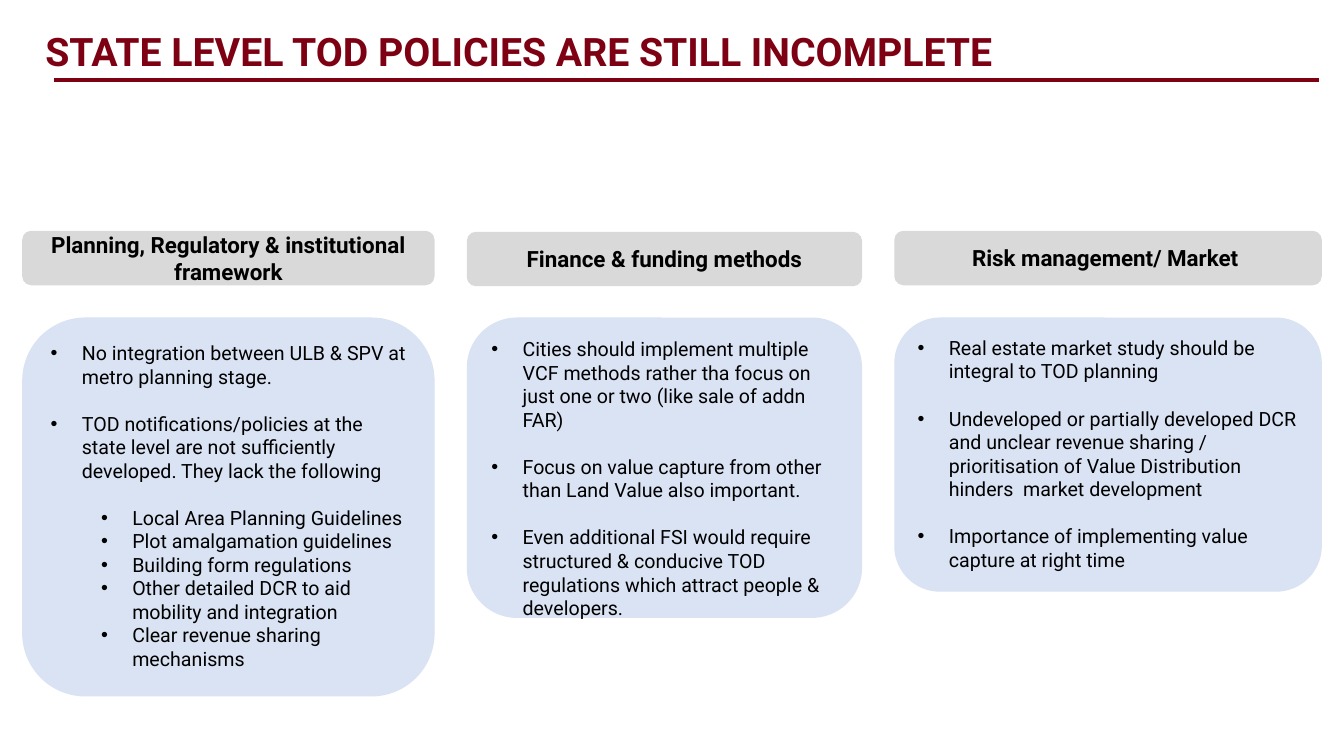
from lxml.etree import SubElement
from pptx import Presentation
from pptx.dml.color import RGBColor
from pptx.enum.shapes import MSO_CONNECTOR, MSO_SHAPE
from pptx.enum.text import MSO_ANCHOR, MSO_AUTO_SIZE, PP_ALIGN
from pptx.oxml.ns import qn
from pptx.util import Inches, Pt

COLORS = {"maroon": "7D0013", "header": "D9D9D9", "body": "DAE3F3", "text": "000000"}
FONT = "Roboto"
BODY_TOP = 3.15
HEADER_HEIGHT = 0.54
PARAGRAPH_GAP = 16.8

COLUMNS = [
    (0.22, 4.09, 2.29, 3.76, "Planning, Regulatory & institutional framework", [
        (0, "No integration between ULB & SPV at metro planning stage."),
        (0, "TOD notifications/policies at the state level are not sufficiently developed. "
            "They lack the following"),
        (1, "Local Area Planning Guidelines"),
        (1, "Plot amalgamation guidelines"),
        (1, "Building form regulations"),
        (1, "Other detailed DCR to aid mobility and integration"),
        (1, "Clear revenue sharing mechanisms"),
    ]),
    (4.63, 3.92, 2.3, 2.98, "Finance & funding methods", [
        (0, "Cities should implement multiple VCF methods rather tha focus on just one or two "
            "(like sale of addn FAR)"),
        (0, "Focus on value capture from other than Land Value also important."),
        (0, "Even additional FSI would require structured & conducive TOD regulations which "
            "attract people & developers."),
    ]),
    (8.87, 4.24, 2.29, 2.72, "Risk management/ Market ", [
        (0, "Real estate market study should be integral to TOD planning"),
        (0, "Undeveloped or partially developed DCR and unclear revenue sharing / prioritisation "
            "of Value Distribution hinders  market development"),
        (0, "Importance of implementing value capture at right time"),
    ]),
]


def add_run(p, text, size, color, bold=False):
    r = p.add_run()
    r.text = text
    r.font.name = FONT
    r.font.size = Pt(size)
    r.font.bold = bold
    r.font.color.rgb = RGBColor.from_string(COLORS[color])


def add_box(slide, left, top, width, height, color, anchor):
    sp = slide.shapes.add_shape(
        MSO_SHAPE.ROUNDED_RECTANGLE, Inches(left), Inches(top), Inches(width), Inches(height))
    sp.shadow.inherit = False
    sp.fill.solid()
    sp.fill.fore_color.rgb = RGBColor.from_string(COLORS[color])
    sp.line.fill.background()
    sp.text_frame.word_wrap = True
    sp.text_frame.vertical_anchor = anchor
    return sp.text_frame


prs = Presentation()
prs.slide_width = Inches(13.33)
prs.slide_height = Inches(7.5)
slide = prs.slides.add_slide(prs.slide_layouts[5])

title = slide.shapes.title
title.left, title.top = Inches(0.35), Inches(0.22)
title.width, title.height = Inches(12.98), Inches(0.57)
tf = title.text_frame
tf.auto_size = MSO_AUTO_SIZE.NONE
tf.vertical_anchor = MSO_ANCHOR.TOP
p = tf.paragraphs[0]
p.alignment = PP_ALIGN.LEFT
add_run(p, "STATE LEVEL TOD POLICIES ARE STILL INCOMPLETE", 28, "maroon", bold=True)

for left, width, header_top, body_height, heading, points in COLUMNS:
    tf = add_box(slide, left, header_top, width, HEADER_HEIGHT, "header", MSO_ANCHOR.MIDDLE)
    p = tf.paragraphs[0]
    p.alignment = PP_ALIGN.CENTER
    add_run(p, heading, 16, "text", bold=True)

    tf = add_box(slide, left, BODY_TOP, width, body_height, "body", MSO_ANCHOR.TOP)
    previous_level = 0
    for i, (level, text) in enumerate(points):
        p = tf.add_paragraph() if i else tf.paragraphs[0]
        p.alignment = PP_ALIGN.LEFT
        p.level = level
        if i and previous_level == 0:
            p.space_before = Pt(PARAGRAPH_GAP)
        previous_level = level
        pPr = p._p.get_or_add_pPr()
        pPr.set("marL", str(Inches(0.31 + 0.5 * level)))
        pPr.set("indent", str(Inches(-0.31)))
        SubElement(pPr, qn("a:buFont")).set("typeface", "Arial")
        SubElement(pPr, qn("a:buChar")).set("char", "•")
        add_run(p, text, 14, "text")

rule = slide.shapes.add_connector(
    MSO_CONNECTOR.STRAIGHT, Inches(0.54), Inches(0.79), Inches(13.08), Inches(0.79))
rule.line.color.rgb = RGBColor.from_string(COLORS["maroon"])
rule.line.width = Pt(3)
SubElement(rule._element.spPr, qn("a:effectLst"))

prs.save("out.pptx")
